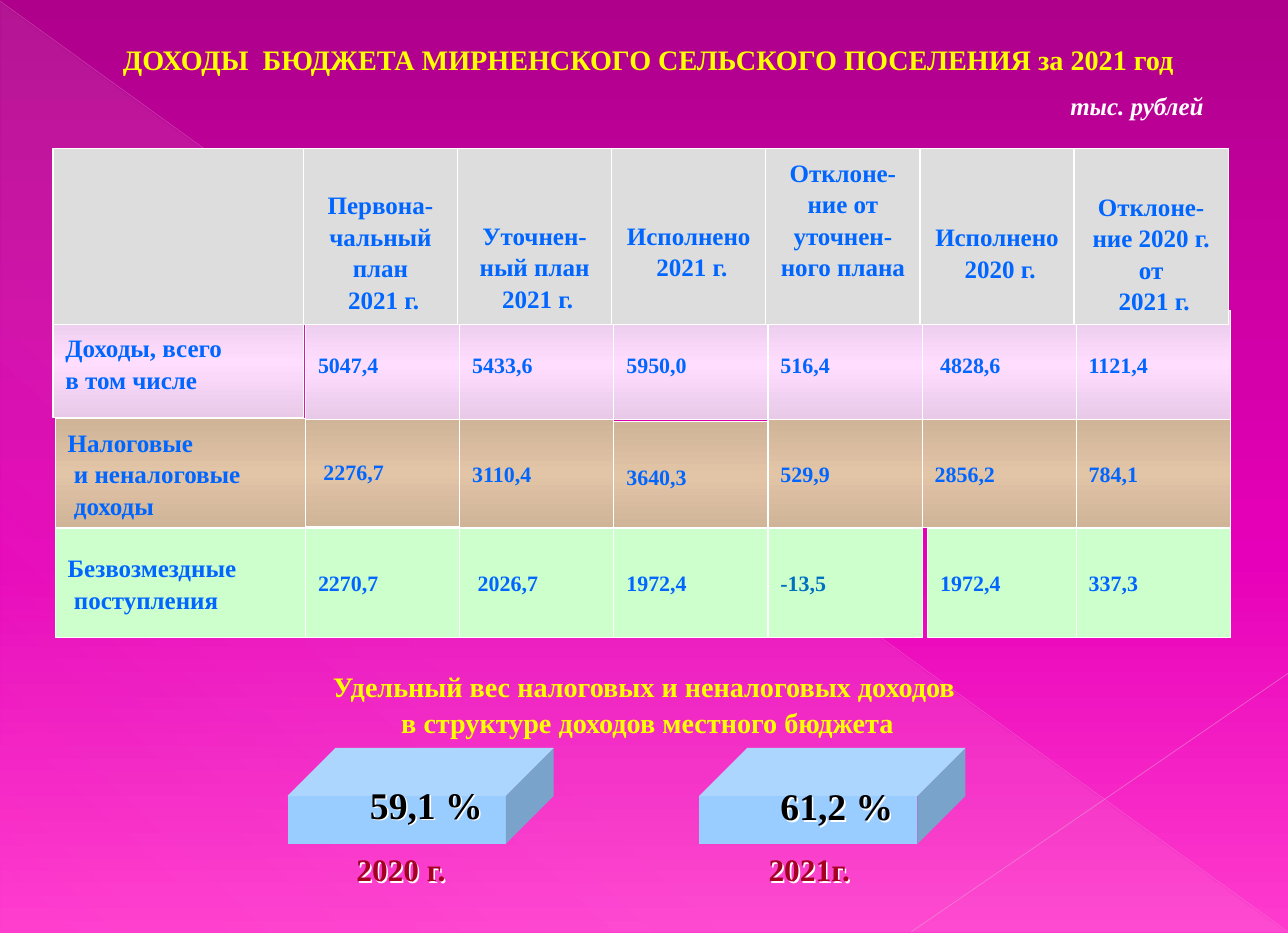
from lxml.etree import SubElement
from pptx import Presentation
from pptx.dml.color import RGBColor
from pptx.enum.shapes import MSO_CONNECTOR, MSO_SHAPE
from pptx.enum.text import MSO_ANCHOR, PP_ALIGN
from pptx.oxml.ns import qn
from pptx.util import Inches, Pt

FONT = "Times New Roman"
WHITE = RGBColor(0xFF, 0xFF, 0xFF)
BLACK = RGBColor(0x00, 0x00, 0x00)
YELLOW = RGBColor(0xFF, 0xFF, 0x00)
BLUE = RGBColor(0x00, 0x66, 0xFF)
DEEP_BLUE = RGBColor(0x00, 0x70, 0xC0)
CRIMSON = RGBColor(0xA5, 0x00, 0x21)
GRAY = RGBColor(0xDD, 0xDD, 0xDD)
MINT = RGBColor(0xCC, 0xFF, 0xCC)
SKY = RGBColor(0x99, 0xCC, 0xFF)
PINK = RGBColor(0xE8, 0xC9, 0xE8)
PALE_PINK = RGBColor(0xFF, 0xDD, 0xFF)
TAN = RGBColor(0xCF, 0xB4, 0x98)
PALE_TAN = RGBColor(0xE2, 0xC4, 0xA6)
MAGENTA = RGBColor(0xE7, 0x00, 0xB9)
DARK_MAGENTA = RGBColor(0xAE, 0x00, 0x8B)
HOT_PINK = RGBColor(0xFF, 0x3B, 0xCE)
VEIL = RGBColor(0xF4, 0xE7, 0xED)
FIRST_RAY = RGBColor(0xE9, 0xA8, 0xD7)
SECOND_RAY = RGBColor(0xEB, 0xB2, 0xDB)

LABEL_WIDTH = 2.22
VALUE_WIDTH = 8.2 / 6
HEADERS = [
    ("Первона-чальный план\n 2021 г.", 0.29, 1.19),
    ("Уточнен-ный план\n 2021 г.", 0.56, 0.92),
    ("Исполнено\n 2021 г.", 0.56, 0.65),
    ("Отклоне-ние от уточнен-ного плана", 0, 1.19),
    ("Исполнено\n 2020 г.", 0.57, 0.65),
    ("Отклоне-ние 2020 г. от\n 2021 г.", 0.3, 1.19),
]
INCOME = [
    (0.96, (TAN, PALE_TAN, TAN),
     ["Налоговые\v и неналоговые\v доходы",
      " 2276,7", "3110,4", "3640,3", "529,9", "2856,2", "784,1"]),
    (1.93, (MINT,),
     ["Безвозмездные\v поступления",
      "2270,7", " 2026,7", "1972,4", "-13,5", "1972,4", "337,3"]),
    (0, (PINK, PALE_PINK, PINK),
     ["Доходы, всего\vв том числе",
      "5047,4", "5433,6", "5950,0", "516,4", " 4828,6", "1121,4"]),
]
NUDGES = {"Доходы, всего\vв том числе": (-0.02, -0.02), " 2276,7": (0, -0.01), "3640,3": (0, 0.03)}
LATE_GRANT = (1, 5)


def add_color(parent, color, alpha=100):
    node = SubElement(parent, qn("a:srgbClr"), val=str(color))
    if alpha < 100:
        SubElement(node, qn("a:alpha"), val=str(alpha * 1000))


def fill_gradient(fill, owner, stops, angle=90):
    fill.gradient()
    gradient = next(owner.iter(qn("a:gradFill")))
    for child in list(gradient):
        gradient.remove(child)
    stop_list = SubElement(gradient, qn("a:gsLst"))
    for position, color, alpha in stops:
        add_color(SubElement(stop_list, qn("a:gs"), pos=str(position * 1000)), color, alpha)
    SubElement(gradient, qn("a:lin"), ang=str(angle * 60000), scaled="0")


def write(frame, text, size, color, align=PP_ALIGN.CENTER, italic=False):
    frame.margin_left = frame.margin_right = Inches(0.11)
    frame.margin_top = frame.margin_bottom = Inches(0.06)
    frame.text = text
    for para in frame.paragraphs:
        para.alignment = align
        if size in (16, 18) and not italic:
            para.line_spacing = 1.05
        font = para.font
        font.name, font.size, font.bold, font.italic = FONT, Pt(size), True, italic
        font.color.rgb = color


def add_text(shapes, box, text, size, color, align=PP_ALIGN.CENTER, italic=False, shadow=False):
    text_box = shapes.add_textbox(*map(Inches, box))
    text_box.text_frame.word_wrap = True
    write(text_box.text_frame, text, size, color, align, italic)
    if shadow:
        effects = SubElement(text_box.element.spPr, qn("a:effectLst"))
        cast = SubElement(effects, qn("a:outerShdw"), dist="17961", dir="2700000")
        add_color(cast, WHITE)


def add_ray(page, start, end, color, width, alpha):
    ray = page.shapes.add_connector(MSO_CONNECTOR.STRAIGHT, *map(Inches, start + end))
    ray.line.color.rgb = color
    ray.line.width = Pt(width)
    tint = next(ray.element.spPr.iter(qn("a:srgbClr")))
    SubElement(tint, qn("a:alpha"), val=str(alpha * 1000))
    SubElement(ray.element.spPr, qn("a:effectLst"))


def add_backdrop(page, width, height):
    fill_gradient(page.background.fill, page.element,
                  [(0, DARK_MAGENTA, 100), (60, MAGENTA, 100), (100, HOT_PINK, 100)])
    veil = page.shapes.add_shape(MSO_SHAPE.RIGHT_TRIANGLE, Inches(0.01), Inches(0.02),
                                 Inches(width - 0.02), Inches(height - 0.03))
    veil.shadow.inherit = False
    veil.line.fill.background()
    fill_gradient(veil.fill, veil.element, [(0, VEIL, 10), (70, VEIL, 8), (100, VEIL, 1)], 133)
    add_ray(page, (0, 0.01), (width, height - 0.01), FIRST_RAY, 0.39, 35)
    add_ray(page, (width, 5.97), (8.08, height - 0.01), SECOND_RAY, 0.47, 45)


def add_cell(shapes, box, colors):
    cell = shapes.add_shape(MSO_SHAPE.RECTANGLE, *map(Inches, box))
    cell.shadow.inherit = False
    if len(colors) == 1:
        cell.fill.solid()
        cell.fill.fore_color.rgb = colors[0]
    else:
        fill_gradient(cell.fill, cell.element,
                      [(50 * index, color, 100) for index, color in enumerate(colors)])
    cell.line.color.rgb = WHITE
    cell.line.width = Pt(0.75)
    return cell


def column_box(left, column):
    if column == 0:
        return left, LABEL_WIDTH
    return left + LABEL_WIDTH + (column - 1) * VALUE_WIDTH, VALUE_WIDTH


def add_income_rows(page, left, top):
    shapes = page.shapes.add_group_shape().shapes
    for column in (1, 2, 3, 4, 5, 6, 0):
        x, width = column_box(left, column)
        for row, (offset, colors, texts) in enumerate(INCOME):
            text = texts[column]
            across, down = NUDGES.get(text, (0, 0))
            if (row, column) == LATE_GRANT:
                across = 0.05
            cell = add_cell(shapes, (x + across, top + offset + down, width, 0.97), colors)
            frame = cell.text_frame
            frame.word_wrap = False
            frame.vertical_anchor = MSO_ANCHOR.MIDDLE
            color = DEEP_BLUE if text.startswith("-") else BLUE
            write(frame, text, 14 if column else 16, color, PP_ALIGN.LEFT)


def add_header(page, left, top):
    shapes = page.shapes.add_group_shape().shapes
    for column in (1, 2, 3, 4, 5, 6, 0):
        x, width = column_box(left, column)
        add_cell(shapes, (x, top, width, 1.56), (GRAY,))
    for column, (text, offset, height) in enumerate(HEADERS, 1):
        x, width = column_box(left, column)
        add_text(shapes, (x, top + offset, width, height), text, 16, BLUE)


def add_share(page, left, top, share, share_box, year, year_left):
    cube = page.shapes.add_shape(MSO_SHAPE.CUBE, Inches(left), Inches(top),
                                 Inches(2.36), Inches(0.85))
    cube.adjustments[0] = 0.5
    cube.shadow.inherit = False
    cube.fill.solid()
    cube.fill.fore_color.rgb = SKY
    cube.line.fill.background()
    across, down = share_box
    add_text(page.shapes, (left + across, top + down, 1.62, 0.52), share, 24, BLACK, shadow=True)
    add_text(page.shapes, (left + year_left, top + 0.85, 1.89, 0.45), year, 20, CRIMSON,
             shadow=True)


def build_budget_page(deck, width, height):
    page = deck.slides.add_slide(deck.slide_layouts[6])
    add_backdrop(page, width, height)
    add_text(page.shapes, (0.49, 0.3, 10.52, 0.42),
             "ДОХОДЫ  БЮДЖЕТА МИРНЕНСКОГО СЕЛЬСКОГО ПОСЕЛЕНИЯ за 2021 год", 18, YELLOW)
    add_income_rows(page, 0.49, 2.75)
    add_header(page, 0.47, 1.32)
    add_text(page.shapes, (0, 5.86, width, 0.72),
             "Удельный вес налоговых и неналоговых доходов\n"
             " в структуре доходов местного бюджета", 18, YELLOW)
    add_share(page, 2.55, 6.63, "59,1 %", (0.42, 0.24), "2020 г.", 0.06)
    add_share(page, 6.2, 6.63, "61,2 %", (0.41, 0.25), "2021г.", 0.03)
    add_text(page.shapes, (9.38, 0.74, 1.71, 0.39), "тыс. рублей", 16, WHITE,
             PP_ALIGN.LEFT, italic=True)


def main():
    width, height = 11.42, 8.27
    deck = Presentation()
    deck.slide_width, deck.slide_height = Inches(width), Inches(height)
    build_budget_page(deck, width, height)
    deck.save("out.pptx")


if __name__ == "__main__":
    main()
